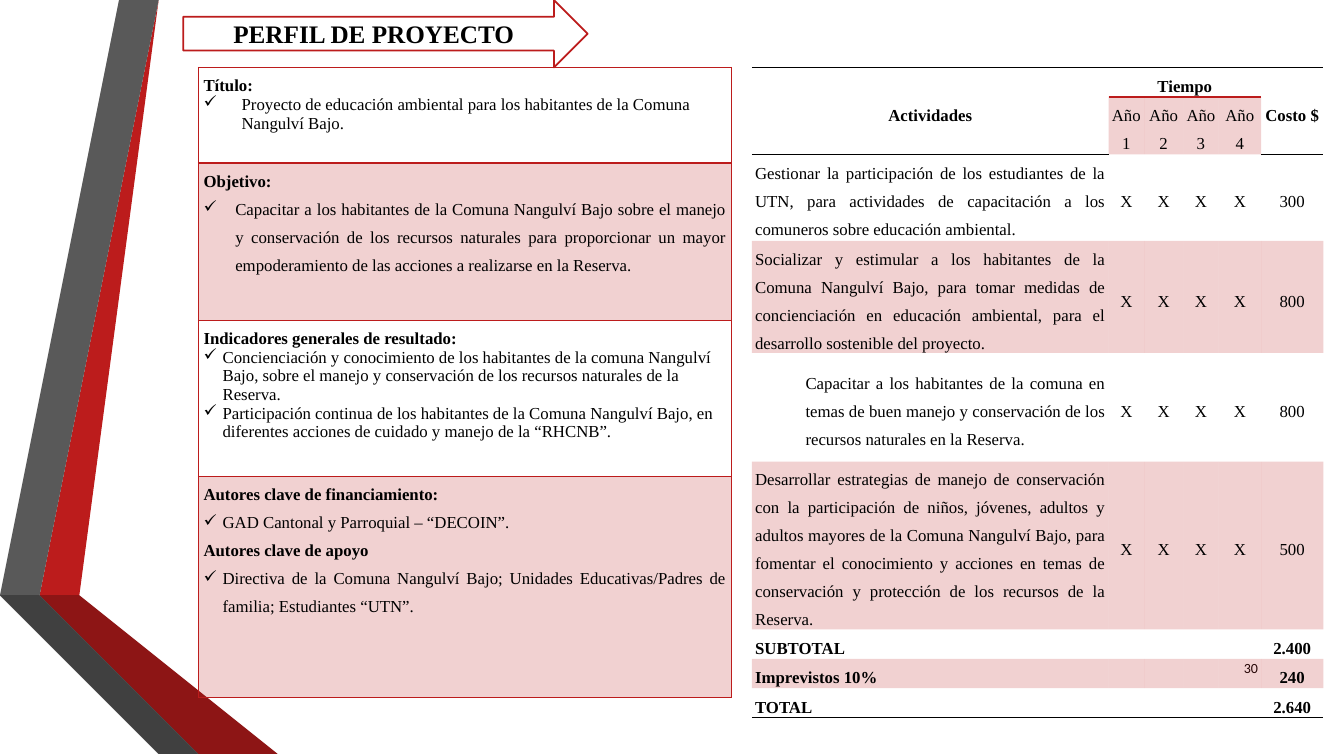
from dataclasses import dataclass

from lxml.etree import SubElement
from pptx import Presentation
from pptx.dml.color import RGBColor
from pptx.enum.shapes import MSO_SHAPE
from pptx.enum.text import MSO_ANCHOR, PP_ALIGN
from pptx.oxml.ns import qn
from pptx.util import Cm, Pt


@dataclass(frozen=True)
class Theme:
    red: str = "BC1C1C"
    dark_red: str = "8D1515"
    deep_red: str = "5E0E0E"
    gray: str = "595959"
    dark_gray: str = "404040"
    deep_gray: str = "262626"
    black: str = "000000"
    white: str = "FFFFFF"
    serif: str = "Times New Roman"
    sans: str = "Calibri"
    title_size: int = 18
    body_size: int = 12
    number_size: int = 10
    tint_alpha: str = "20000"
    plain_table: str = "{2D5ABB26-0587-4C30-8999-92F81FD0307C}"


theme = Theme()


def write_paragraph(paragraph, text, align, bold=False, size=theme.body_size, font=theme.serif):
    paragraph.alignment = align
    run = paragraph.add_run()
    run.text = text
    run.font.name = font
    run.font.size = Pt(size)
    run.font.bold = bold
    run.font.color.rgb = RGBColor.from_string(theme.black)


def style_cell(cell, borders, shaded, margin):
    cell.margin_left = cell.margin_right = Cm(margin)
    cell.margin_top = cell.margin_bottom = 0
    properties = cell._tc.get_or_add_tcPr()
    for side in "LRTB":
        color, width = borders.get(side, (None, 0))
        line = SubElement(properties, qn(f"a:ln{side}"), w=str(Pt(width)))
        if color:
            solid = SubElement(line, qn("a:solidFill"))
            SubElement(solid, qn("a:srgbClr"), val=color)
        else:
            SubElement(line, qn("a:noFill"))
    if shaded:
        cell.fill.solid()
        cell.fill.fore_color.rgb = RGBColor.from_string(theme.red)
        SubElement(next(properties.find(qn("a:solidFill")).iter(qn("a:srgbClr"))),
                   qn("a:alpha"), val=theme.tint_alpha)
    else:
        cell.fill.background()


presentation = Presentation()
presentation.slide_width = Cm(33.87)
presentation.slide_height = Cm(19.05)
slide = presentation.slides.add_slide(presentation.slide_layouts[5])
shapes = slide.shapes

ribbons = [
    (theme.red, [(1.27, 14.68), (1.96, 14.81), (4.39, 0), (3.68, 0)]),
    (theme.gray, [(3.53, 0), (2.82, 0), (0.41, 14.55), (1.12, 14.66)]),
    (theme.deep_gray, [(0.41, 14.55), (3.68, 19.05), (3.84, 19.05)]),
    (theme.deep_red, [(1.27, 14.71), (5.28, 19.05), (5.44, 19.05)]),
    (theme.dark_red, [(1.27, 14.7), (5.44, 19.05), (7.19, 19.05), (1.96, 14.81)]),
    (theme.dark_gray, [(5.13, 19.05), (1.22, 14.81), (1.12, 14.66), (0.41, 14.55), (3.84, 19.05)]),
]
for color, points in ribbons:
    builder = shapes.build_freeform(*points[0], scale=Cm(1))
    builder.add_line_segments(points[1:], close=True)
    ribbon = builder.convert_to_shape()
    ribbon.shadow.inherit = False
    ribbon.fill.solid()
    ribbon.fill.fore_color.rgb = RGBColor.from_string(color)
    ribbon.line.fill.background()

page_number = shapes.add_textbox(Cm(30.43), Cm(16.33), Cm(1.52), Cm(1.02)).text_frame
page_number.word_wrap = True
page_number.vertical_anchor = MSO_ANCHOR.MIDDLE
write_paragraph(page_number.paragraphs[0], "30", PP_ALIGN.RIGHT,
                size=theme.number_size, font=theme.sans)

arrow = shapes.add_shape(MSO_SHAPE.RIGHT_ARROW, Cm(4.62), 0, Cm(10.19), Cm(1.7))
arrow.shadow.inherit = False
arrow.fill.solid()
arrow.fill.fore_color.rgb = RGBColor.from_string(theme.white)
arrow.line.color.rgb = RGBColor.from_string(theme.red)
arrow.line.width = Pt(1.25)

title = shapes.title
title.left, title.top, title.width, title.height = Cm(4.62), 0, Cm(9.6), Cm(1.7)
title.text_frame.vertical_anchor = MSO_ANCHOR.MIDDLE
write_paragraph(title.text_frame.paragraphs[0], "PERFIL DE PROYECTO", PP_ALIGN.CENTER,
                bold=True, size=theme.title_size)
shapes._spTree.append(title.element)

left, justify, center = PP_ALIGN.LEFT, PP_ALIGN.JUSTIFY, PP_ALIGN.CENTER
profile = [
    (2.41, 0.96, left, [
        ("Título:", ["Proyecto de educación ambiental para los habitantes de la Comuna Nangulví Bajo."])]),
    (3.96, 0.8, justify, [
        ("Objetivo:", ["Capacitar a los habitantes de la Comuna Nangulví Bajo sobre el manejo y conservación de los recursos naturales para proporcionar un mayor empoderamiento de las acciones a realizarse en la Reserva."])]),
    (3.94, 0.48, left, [
        ("Indicadores generales de resultado:", [
            "Concienciación y conocimiento de los habitantes de la comuna Nangulví Bajo, sobre el manejo y conservación de los recursos naturales de la Reserva.",
            "Participación continua de los habitantes de la Comuna Nangulví Bajo, en diferentes acciones de cuidado y manejo de la “RHCNB”."])]),
    (5.56, 0.48, justify, [
        ("Autores clave de financiamiento:", ["GAD Cantonal y Parroquial – “DECOIN”."]),
        ("Autores clave de apoyo", ["Directiva de la Comuna Nangulví Bajo; Unidades Educativas/Padres de familia; Estudiantes “UTN”."])]),
]
profile_frame = shapes.add_table(len(profile), 1, Cm(5), Cm(1.7), Cm(13.44), Cm(15.87))
for row, (height, indent, align, sections) in enumerate(profile):
    profile_frame.table.rows[row].height = Cm(height)
    cell = profile_frame.table.cell(row, 0)
    borders = dict.fromkeys("LRTB", (theme.red, 1))
    if row == 0:
        borders["B"] = (theme.red, 2)
    elif row == 1:
        borders["T"] = (theme.red, 2)
    style_cell(cell, borders, row % 2 == 1, 0.13)
    frame = cell.text_frame
    for number, (heading, items) in enumerate(sections):
        paragraph = frame.add_paragraph() if number else frame.paragraphs[0]
        paragraph.line_spacing = 1.5
        write_paragraph(paragraph, heading, justify, bold=True)
        for item in items:
            paragraph = frame.add_paragraph()
            properties = paragraph._p.get_or_add_pPr()
            properties.set("marL", str(Cm(indent)))
            properties.set("indent", str(-Cm(indent)))
            SubElement(properties, qn("a:buChar"), char="✓")
            paragraph.line_spacing = 1.5 if align == justify else 1.0
            write_paragraph(paragraph, item, align)

marks = ["X"] * 4
blanks = [""] * 4
budget = [
    (0.74, ["Actividades", "Tiempo", "", "", "", "Costo $"]),
    (1.45, ["", "Año 1", "Año 2", "Año 3", "Año 4", ""]),
    (2.18, ["Gestionar la participación de los estudiantes de la UTN, para actividades de capacitación a los comuneros sobre educación ambiental.", *marks, "300"]),
    (2.62, ["Socializar y estimular a los habitantes de la Comuna Nangulví Bajo, para tomar medidas de concienciación en educación ambiental, para el desarrollo sostenible del proyecto.", *marks, "800"]),
    (2.74, ["Capacitar a los habitantes de la comuna en temas de buen manejo y conservación de los recursos naturales en la Reserva.", *marks, "800"]),
    (4.04, ["Desarrollar estrategias de manejo de conservación con la participación de niños, jóvenes, adultos y adultos mayores de la Comuna Nangulví Bajo, para fomentar el conocimiento y acciones en temas de conservación y protección de los recursos de la Reserva.", *marks, "500"]),
    (0.74, ["SUBTOTAL", *blanks, "2.400"]),
    (0.74, ["Imprevistos 10%", *blanks, "240"]),
    (0.74, ["TOTAL", *blanks, "2.640"]),
]
widths = [8.99, 0.89, 0.99, 0.89, 1.07, 1.57]
budget_frame = shapes.add_table(len(budget), len(widths), Cm(18.95), Cm(1.7), Cm(14.4), Cm(15.99))
table = budget_frame.table
for column, width in zip(table.columns, widths):
    column.width = Cm(width)
table.cell(0, 0).merge(table.cell(1, 0))
table.cell(0, 1).merge(table.cell(0, 4))
table.cell(0, 5).merge(table.cell(1, 5))
rule, accent = (theme.black, 1), (theme.red, 2)
for row, (height, texts) in enumerate(budget):
    table.rows[row].height = Cm(height)
    for column, text in enumerate(texts):
        cell = table.cell(row, column)
        is_year = 1 <= column <= 4
        borders = {}
        if row == 0:
            borders = {"T": rule, "B": accent if is_year else rule}
        elif row == 1:
            borders = {"T": accent} if is_year else {"B": rule}
        elif row == 2 and not is_year:
            borders = {"T": rule}
        elif row == 8:
            borders = {"B": rule}
        style_cell(cell, borders, row % 2 == 1 and (row > 1 or is_year), 0.08)
        cell.vertical_anchor = MSO_ANCHOR.MIDDLE
        paragraph = cell.text_frame.paragraphs[0]
        if not text:
            SubElement(paragraph._p, qn("a:endParaRPr"), sz=str(theme.body_size * 100))
            continue
        paragraph.line_spacing = 1.5
        paragraph.space_after = Pt(12)
        if row == 4 and column == 0:
            paragraph._p.get_or_add_pPr().set("marL", str(Cm(1.27)))
            paragraph.space_before = Pt(6)
        align = center if column or row == 0 else left if row > 5 else justify
        write_paragraph(paragraph, text, align, bold=row == 0 or row > 5)

for table_frame in (profile_frame, budget_frame):
    table_frame.table.first_row = False
    table_frame.table.horz_banding = False
    next(table_frame.element.iter(qn("a:tableStyleId"))).text = theme.plain_table

presentation.save("out.pptx")
